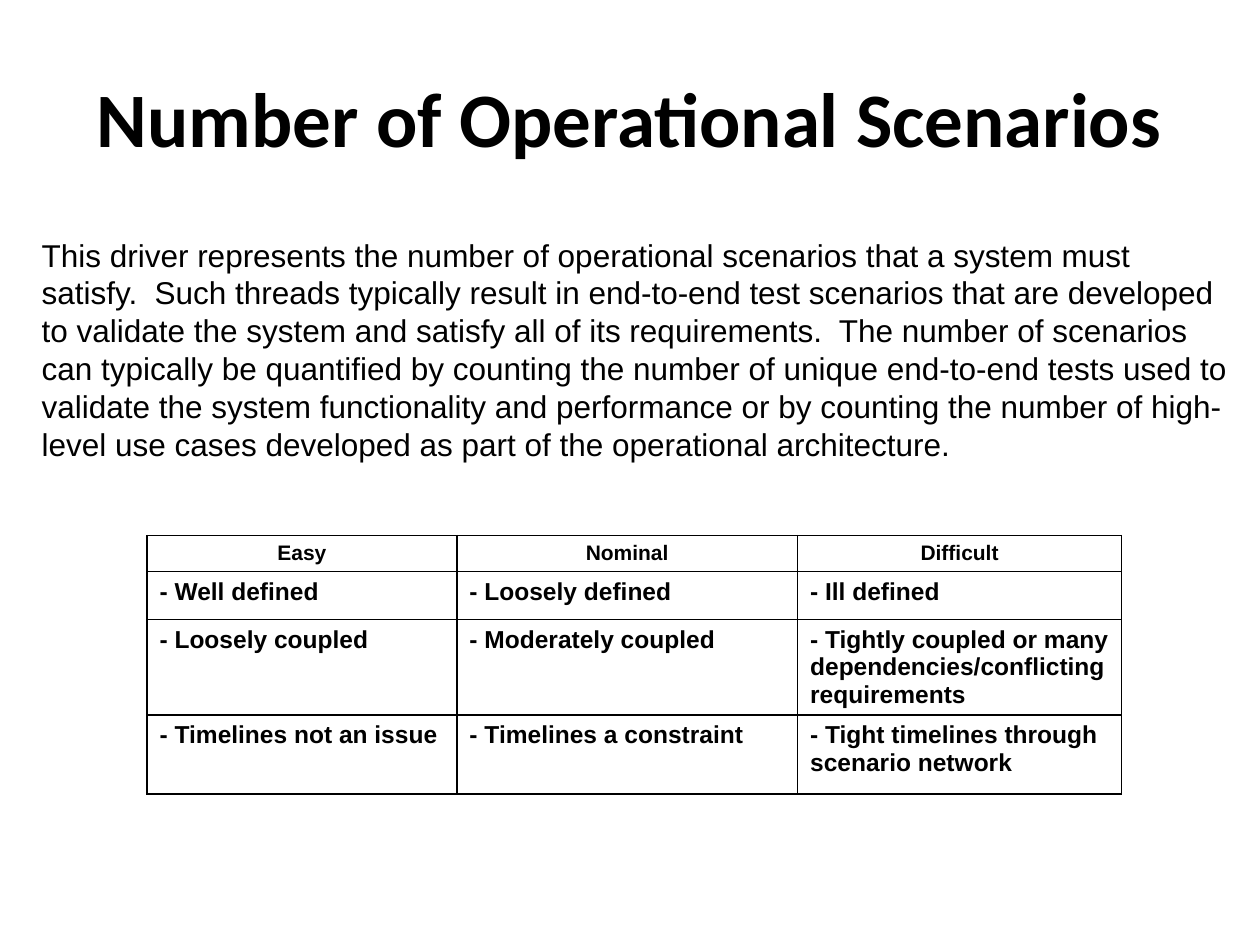
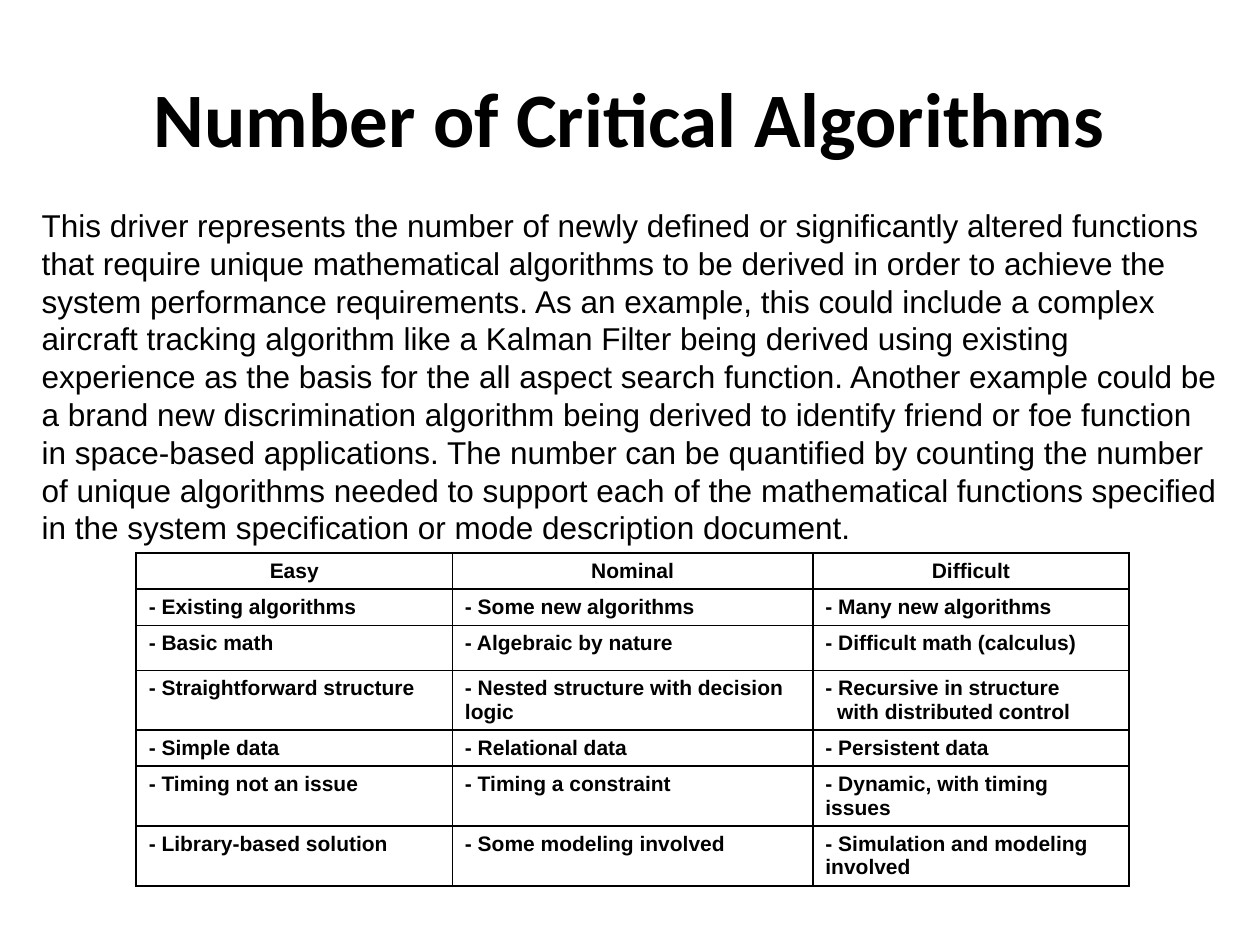
from lxml import etree
from pptx import Presentation
from pptx.dml.color import RGBColor
from pptx.enum import text as t
from pptx.oxml import ns
from pptx.util import Pt

INK = "000000"
HEAD, BODY = "Calibri", "Arial"
HEADS = ["Easy", "Nominal", "Difficult"]
TITLE_BOX = (36, 21.6, 648, 90)
HANG = 6.67  # indent of a line that continues a cell's item

SLIDES = [
    dict(
        title="Number of Operational Scenarios",
        prose="This driver represents the number of operational scenarios that a "
              "system must satisfy.  Such threads typically result in end-to-end "
              "test scenarios that are developed to validate the system and satisfy "
              "all of its requirements.  The number of scenarios can typically be "
              "quantified by counting the number of unique end-to-end tests used to "
              "validate the system functionality and performance or by counting the "
              "number of high-level use cases developed as part of the operational "
              "architecture.",
        prose_box=(23.8, 121.7, 678.2, 146.2),
        grid_at=(84, 306),
        cols=[177.1, 194.7, 185.2],
        rows=[20.6, 27.4, 54.6, 45],
        size=14,
        items=[
            ["Well defined", "Loosely defined", "Ill defined"],
            ["Loosely coupled", "Moderately coupled",
             "Tightly coupled or many dependencies/conflicting requirements"],
            ["Timelines not an issue", "Timelines a constraint",
             "Tight timelines through scenario network"],
        ],
    ),
    dict(
        title="Number of Critical Algorithms",
        prose="This driver represents the number of newly defined or significantly "
              "altered functions that require unique mathematical algorithms to be "
              "derived in order to achieve the system performance requirements. As "
              "an example, this could include a complex aircraft tracking algorithm "
              "like a Kalman Filter being derived using existing experience as the "
              "basis for the all aspect search function. Another example could be a "
              "brand new discrimination algorithm being derived to identify friend "
              "or foe function in space-based applications. The number can be "
              "quantified by counting the number of unique algorithms needed to "
              "support each of the mathematical functions specified in the system "
              "specification or mode description document.",
        prose_box=(23.8, 104.4, 671.8, 211.7),
        grid_at=(77.8, 316),
        cols=[180.7, 206, 180.7],
        rows=[20.6, 20.6, 25.7, 34.1, 20.6, 34.2, 34.2],
        size=12,
        items=[
            ["Existing algorithms", "Some new algorithms", "Many new algorithms"],
            ["Basic math", "Algebraic by nature", "Difficult math (calculus)"],
            ["Straightforward structure", "Nested structure with decision logic",
             "Recursive in structure\nwith distributed control"],
            ["Simple data", "Relational data", "Persistent data"],
            ["Timing not an issue", "Timing a constraint",
             "Dynamic, with timing issues"],
            ["Library-based solution", "Some modeling involved",
             "Simulation and modeling involved"],
        ],
    ),
]


def color(code):
    return RGBColor.from_string(code)


def write(para, words, size, font=BODY, bold=False, align=t.PP_ALIGN.LEFT):
    para.alignment = align
    run = para.add_run()
    run.text = words
    run.font.size, run.font.name, run.font.bold = Pt(size), font, bold
    run.font.color.rgb = color(INK)


def add_title(slide, words, box):
    shape = slide.shapes.title
    shape.left, shape.top, shape.width, shape.height = map(Pt, box)
    frame = shape.text_frame
    frame.vertical_anchor = t.MSO_ANCHOR.MIDDLE
    write(frame.paragraphs[0], words, 44, HEAD, True, t.PP_ALIGN.CENTER)


def add_prose(slide, words, box):
    frame = slide.shapes.add_textbox(*map(Pt, box)).text_frame
    frame.word_wrap = True
    frame.auto_size = t.MSO_AUTO_SIZE.SHAPE_TO_FIT_TEXT
    frame.vertical_anchor = t.MSO_ANCHOR.MIDDLE
    frame.margin_left = frame.margin_right = 0
    frame.margin_top, frame.margin_bottom = Pt(12.2), Pt(2.9)
    write(frame.paragraphs[0], words, 18)


def edge(cell):
    # Thin line on all four sides, no fill
    props = cell._tc.get_or_add_tcPr()
    for side in ("lnL", "lnR", "lnT", "lnB"):
        line = etree.SubElement(props, ns.qn("a:" + side), w=str(Pt(1)))
        fill = etree.SubElement(line, ns.qn("a:solidFill"))
        etree.SubElement(fill, ns.qn("a:srgbClr"), val=INK)
    cell.fill.background()


def add_grid(slide, at, cols, rows, items, size):
    box = (*at, sum(cols), sum(rows))
    grid = slide.shapes.add_table(len(rows), len(cols), *map(Pt, box)).table
    grid.first_row = grid.horz_banding = False
    for col, width in zip(grid.columns, cols):
        col.width = Pt(width)
    for row, height in zip(grid.rows, rows):
        row.height = Pt(height)

    # Heading row
    for c, words in enumerate(HEADS):
        cell = grid.cell(0, c)
        edge(cell)
        write(cell.text_frame.paragraphs[0], words, 12, bold=True,
              align=t.PP_ALIGN.CENTER)

    # Item rows
    for r, row in enumerate(items, 1):
        for c, words in enumerate(row):
            cell = grid.cell(r, c)
            edge(cell)
            first, *rest = words.split("\n")
            frame = cell.text_frame
            write(frame.paragraphs[0], "- " + first, size, bold=True)
            for more in rest:
                para = frame.add_paragraph()
                write(para, more, size, bold=True)
                para._p.get_or_add_pPr().set("marL", str(Pt(HANG)))


def add_driver(deck, data):
    slide = deck.slides.add_slide(deck.slide_layouts[5])
    add_title(slide, data["title"], TITLE_BOX)
    add_grid(slide, data["grid_at"], data["cols"], data["rows"],
             data["items"], data["size"])
    add_prose(slide, data["prose"], data["prose_box"])


def main():
    deck = Presentation()
    deck.slide_width, deck.slide_height = Pt(720), Pt(540)
    for data in SLIDES:
        add_driver(deck, data)
    deck.save("out.pptx")


if __name__ == "__main__":
    main()
